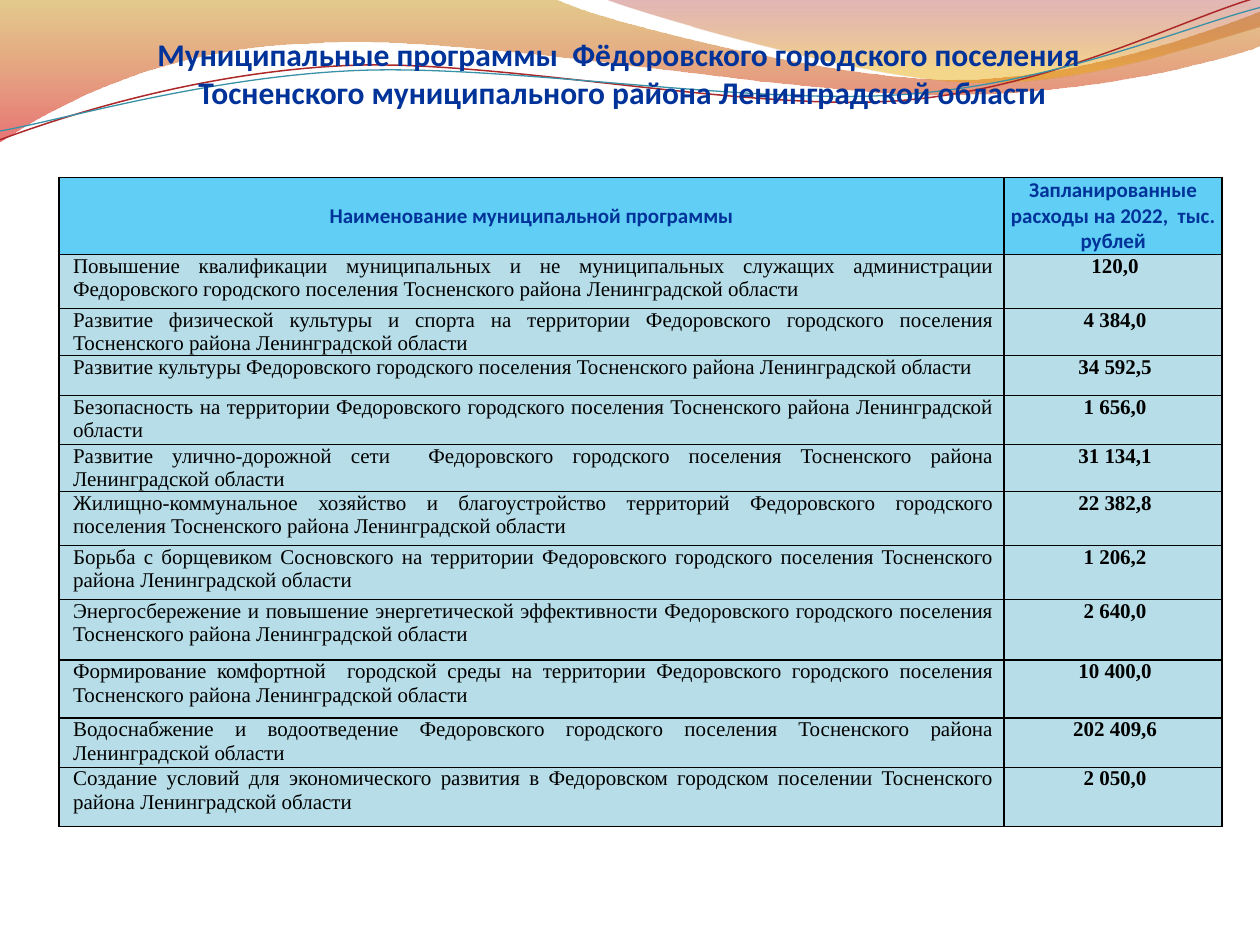
"""Build the slide listing the municipal programmes and their planned spending."""
import lxml.etree
import pptx
import pptx.dml.color
import pptx.enum.text
import pptx.oxml.ns
import pptx.util

Inches = pptx.util.Inches
Pt = pptx.util.Pt
RGBColor = pptx.dml.color.RGBColor
ALIGN = pptx.enum.text.PP_ALIGN
ANCHOR = pptx.enum.text.MSO_ANCHOR
qn = pptx.oxml.ns.qn

NAVY = RGBColor(0x00, 0x33, 0x99)
BLACK = RGBColor(0x00, 0x00, 0x00)
SKY = RGBColor(0x00, 0xB0, 0xF0)
PALE = RGBColor(0xB7, 0xDE, 0xE8)
GOLD = RGBColor(0xC3, 0x8B, 0x00)
RED = RGBColor(0xD6, 0x03, 0x05)
MAROON = RGBColor(0xA1, 0x11, 0x12)
AMBER = RGBColor(0xE9, 0xA6, 0x00)
CRIMSON = RGBColor(0xAC, 0x28, 0x29)
TEAL = RGBColor(0x38, 0x91, 0xA7)

LEFT_WAVE = [
    (0, 0), (4.4, -0.01), (4.76, 0.17, 6.64, 0.63, 7.58, 0.63),
    (8.53, 0.63, 9.58, 0.26, 10, 0.09), (10.01, 0.36),
    (9.83, 0.44, 8.7, 0.76, 7.46, 0.75), (6.22, 0.75, 3.82, 0.28, 2.57, 0.34),
    (1.29, 0.36, 0.46, 0.83, -0.01, 1.13),
]
RIGHT_WAVE = [
    (4.79, -0.01), (5.09, 0.11, 6.82, 0.62, 7.69, 0.65),
    (8.56, 0.69, 9.61, 0.32, 10, 0.21), (10, 0),
]
RED_CURVE = [
    (0, 1.11), (0.48, 0.93, 1.58, 0.57, 2.77, 0.52),
    (3.95, 0.47, 5.93, 0.89, 7.13, 0.8), (8.33, 0.71, 9.38, 0.15, 9.98, -0.02),
]
TEAL_CURVE = [
    (0, 1.04), (0.47, 0.96, 1.64, 0.61, 2.83, 0.56),
    (4.03, 0.51, 5.97, 0.84, 7.17, 0.75), (8.36, 0.67, 9.41, 0.21, 10, 0.06),
]

TITLE = [
    "Муниципальные программы  Фёдоровского городского поселения ",
    "Тосненского муниципального района Ленинградской области",
]
HEADERS = [
    ["Наименование муниципальной программы"],
    ["Запланированные", "расходы на 2022,  тыс. рублей"],
]
PLACE = "Федоровского городского поселения Тосненского района Ленинградской области"
PROGRAMMES = [
    (f"Повышение квалификации муниципальных и не муниципальных служащих администрации {PLACE}", "120,0", 0.43),
    (f"Развитие физической культуры и спорта на территории {PLACE}", "4 384,0", 0.37),
    (f"Развитие культуры {PLACE}", "34 592,5", 0.32),
    (f"Безопасность на территории {PLACE}", "1 656,0", 0.39),
    (f"Развитие улично-дорожной сети  {PLACE}", "31 134,1", 0.31),
    (f"Жилищно-коммунальное хозяйство и благоустройство территорий {PLACE}", "22 382,8", 0.43),
    (f"Борьба с борщевиком Сосновского на территории {PLACE}", "1 206,2", 0.43),
    (f"Энергосбережение и повышение энергетической эффективности {PLACE}", "2 640,0", 0.48),
    (f"Формирование комфортной  городской среды на территории {PLACE}", "10 400,0", 0.46),
    (f"Водоснабжение и водоотведение {PLACE}", "202 409,6", 0.39),
    ("Создание условий для экономического развития в Федоровском городском поселении "
     "Тосненского района Ленинградской области", "2 050,0", 0.47),
]


def set_opacity(element, *percents):
    """Give each colour inside the element its opacity in turn."""
    for color, percent in zip(element.iter(qn("a:srgbClr")), percents):
        lxml.etree.SubElement(color, qn("a:alpha"), val=str(percent * 1000))


def write(tf, lines, font="Calibri", size=12, color=NAVY, bold=True, align=ALIGN.CENTER, indent=0):
    """Fill a text frame with one formatted paragraph per line."""
    for i, line in enumerate(lines):
        p = tf.paragraphs[0] if i == 0 else tf.add_paragraph()
        p.alignment = align
        p.space_before = Pt(0)
        if indent:
            p._p.get_or_add_pPr().set("marL", str(Inches(indent)))
        r = p.add_run()
        r.text = line
        r.font.name, r.font.size, r.font.bold = font, Pt(size), bold
        r.font.color.rgb = color


def add_path(s, segments, close):
    """Draw a freeform of straight and cubic segments."""
    points = [(Inches(seg[k]), Inches(seg[k + 1])) for seg in segments for k in range(0, len(seg), 2)]
    builder = s.shapes.build_freeform(*points[0])
    builder.add_line_segments(points[1:], close=close)
    sp = builder.convert_to_shape()
    sp.shadow.inherit = False
    path = next(sp._element.iter(qn("a:path")))
    lines = iter(path.findall(qn("a:lnTo")))
    for segment in segments[1:]:
        first = next(lines)
        if len(segment) == 6:
            first.tag = qn("a:cubicBezTo")
            for line in (next(lines), next(lines)):
                first.append(line[0])
                path.remove(line)
    return sp


def add_wave(s, segments, stops):
    """Draw a closed wave with a translucent gradient from top to bottom."""
    sp = add_path(s, segments, True)
    sp.line.fill.background()
    sp.fill.gradient()
    sp.fill.gradient_angle = 270
    for stop, (position, color, _) in zip(sp.fill.gradient_stops, stops):
        stop.position = position
        stop.color.rgb = color
    set_opacity(sp._element.spPr, *[stop[2] for stop in stops])


def add_curve(s, segments, color, width):
    """Draw an open curved line."""
    sp = add_path(s, segments, False)
    sp.fill.background()
    sp.line.color.rgb = color
    sp.line.width = Pt(width)


def add_title(s):
    """Format the title placeholder and bring it to the front."""
    sp = s.shapes.title
    sp.left, sp.top, sp.width, sp.height = Inches(0), Inches(0.2), Inches(9.88), Inches(0.76)
    sp.text_frame.word_wrap = True
    sp.text_frame.vertical_anchor = ANCHOR.MIDDLE
    write(sp.text_frame, TITLE, size=18)
    s.shapes._spTree.append(sp._element)


def format_cell(cell, fill, left, right, anchor):
    """Set the borders, fill, side margins and anchor of a cell."""
    tcPr = cell._tc.get_or_add_tcPr()
    for side in ("a:lnL", "a:lnR", "a:lnT", "a:lnB"):
        ln = lxml.etree.SubElement(tcPr, qn(side), w=str(Pt(1)))
        solid = lxml.etree.SubElement(ln, qn("a:solidFill"))
        lxml.etree.SubElement(solid, qn("a:srgbClr"), val=str(BLACK))
    cell.fill.solid()
    cell.fill.fore_color.rgb = fill
    cell.margin_left, cell.margin_right = Inches(left), Inches(right)
    cell.margin_top = cell.margin_bottom = 0
    cell.vertical_anchor = anchor


def add_programme_table(s):
    """Add the table of programmes and planned spending."""
    heights = [0.37] + [row[2] for row in PROGRAMMES]
    table = s.shapes.add_table(len(heights), 2, Inches(0.47), Inches(1.41),
                               Inches(9.23), Inches(sum(heights))).table
    table.first_row = table.horz_banding = False
    for column, width in zip(table.columns, (7.5, 1.73)):
        column.width = Inches(width)
    for row, height in zip(table.rows, heights):
        row.height = Inches(height)
    for cell, lines in zip(table.rows[0].cells, HEADERS):
        format_cell(cell, SKY, 0, 0, ANCHOR.MIDDLE)
        set_opacity(cell._tc.tcPr.find(qn("a:solidFill")), 62)
        write(cell.text_frame, lines)
    for i, (name, amount, _) in enumerate(PROGRAMMES, 1):
        for j, (text, align) in enumerate([(name, ALIGN.JUSTIFY), (amount, ALIGN.CENTER)]):
            cell = table.cell(i, j)
            format_cell(cell, PALE, 0.07, 0.08, ANCHOR.TOP)
            write(cell.text_frame, [text], font="Times New Roman", color=BLACK,
                  bold=j == 1, align=align, indent=0.04)


def main():
    """Build and save the presentation."""
    prs = pptx.Presentation()
    prs.slide_width, prs.slide_height = Inches(10), Inches(7.5)
    s = prs.slides.add_slide(prs.slide_layouts[5])
    add_wave(s, LEFT_WAVE, [(0, GOLD, 45), (1, RED, 55)])
    add_wave(s, RIGHT_WAVE, [(0, MAROON, 30), (0.8, AMBER, 45)])
    add_curve(s, RED_CURVE, CRIMSON, 0.85)
    add_curve(s, TEAL_CURVE, TEAL, 0.75)
    add_programme_table(s)
    add_title(s)
    prs.save("out.pptx")


if __name__ == "__main__":
    main()
